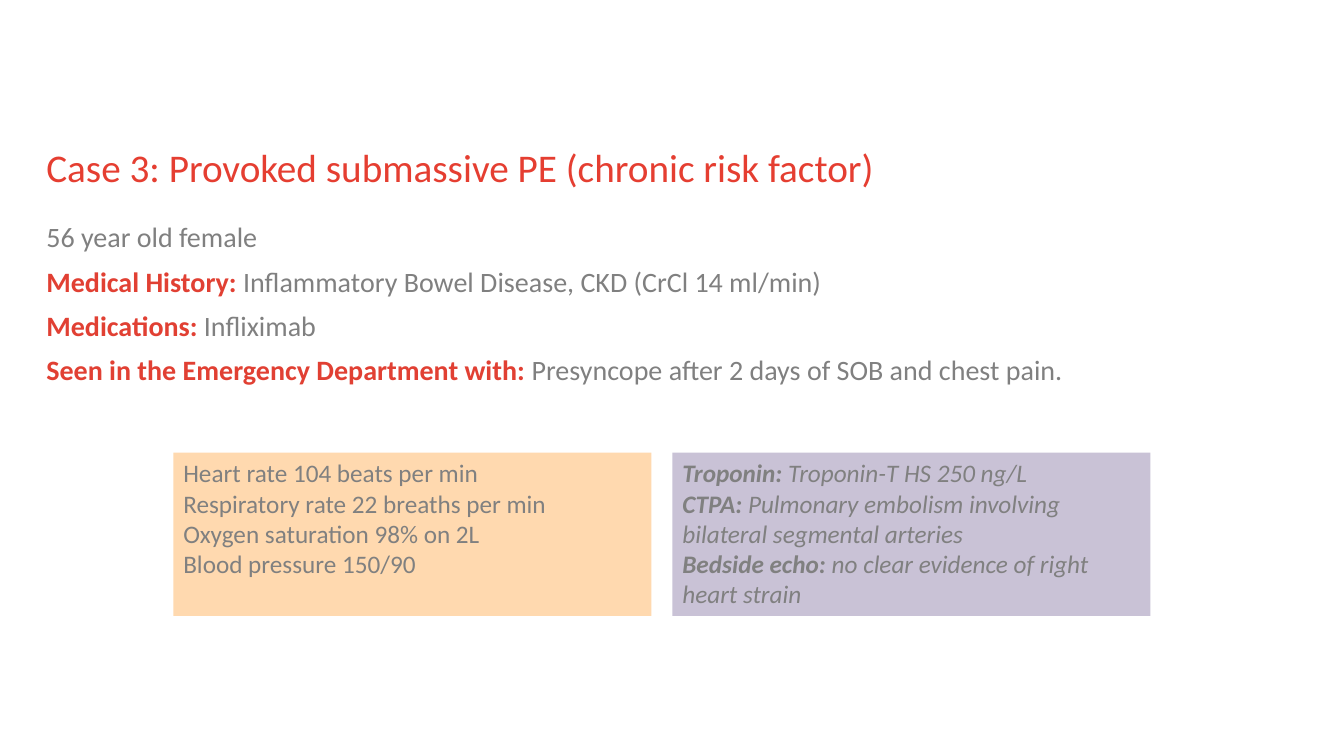
from pptx import Presentation
from pptx.dml.color import RGBColor
from pptx.enum.shapes import MSO_SHAPE
from pptx.enum.text import MSO_ANCHOR, PP_ALIGN
from pptx.util import Inches, Pt

RECTANGLE = MSO_SHAPE.RECTANGLE
TOP = MSO_ANCHOR.TOP
LEFT = PP_ALIGN.LEFT

# Content: each line is a (label, detail) pair
CASE_TITLE = [("", "Case 3: Provoked submassive PE (chronic risk factor)")]
HISTORY = [
    ("", "56 year old female"),
    ("Medical History: ", "Inflammatory Bowel Disease, CKD (CrCl 14 ml/min)"),
    ("Medications: ", "Infliximab"),
    ("Seen in the Emergency Department with: ",
     "Presyncope after 2 days of SOB and chest pain."),
]
VITALS = [
    ("", "Heart rate 104 beats per min"),
    ("", "Respiratory rate 22 breaths per min"),
    ("", "Oxygen saturation 98% on 2L"),
    ("", "Blood pressure 150/90"),
]
FINDINGS = [
    ("Troponin: ", "Troponin-T HS 250 ng/L"),
    ("CTPA: ", "Pulmonary embolism involving bilateral segmental arteries"),
    ("Bedside echo: ", "no clear evidence of right heart strain"),
]
PANELS = [(VITALS, "FFD9AF", False), (FINDINGS, "C9C2D6", True)]

# Format
FONT = "Calibri"
TITLE_RED, LABEL_RED, GREY = "E53E31", "E14033", "808080"
MARGINS = ("margin_left", "margin_top", "margin_right", "margin_bottom")
TEXT_LEFT, TEXT_WIDTH = 0.46, 12
PANEL_LEFT, PANEL_TOP = 1.72, 4.49
PANEL_WIDTH, PANEL_HEIGHT, PANEL_GAP = 4.74, 1.62, 0.21


def color(hex_value):
    return RGBColor.from_string(hex_value)


def write(frame, lines, size, detail_color=GREY, label_color=GREY,
          italic=False, line_spacing=1.0, gap=0):
    frame.word_wrap = True
    frame.vertical_anchor = TOP
    for index, (label, detail) in enumerate(lines):
        paragraph = frame.paragraphs[0] if index == 0 else frame.add_paragraph()
        layout = {"alignment": LEFT, "line_spacing": line_spacing,
                  "space_before": Pt(gap if index else 0)}
        for key, value in layout.items():
            setattr(paragraph, key, value)
        for text, bold, hex_value in ((label, True, label_color),
                                      (detail, False, detail_color)):
            if not text:
                continue
            run = paragraph.add_run()
            run.text = text
            style = {"name": FONT, "size": Pt(size), "bold": bold, "italic": italic}
            for key, value in style.items():
                setattr(run.font, key, value)
            run.font.color.rgb = color(hex_value)


def add_text(slide, top, height, lines, size, **style):
    box = slide.shapes.add_textbox(Inches(TEXT_LEFT), Inches(top),
                                   Inches(TEXT_WIDTH), Inches(height))
    for margin in MARGINS:
        setattr(box.text_frame, margin, 0)
    write(box.text_frame, lines, size, line_spacing=0.9, **style)


def main():
    deck = Presentation()
    deck.slide_width, deck.slide_height = Inches(13.33), Inches(7.5)
    slide = deck.slides.add_slide(deck.slide_layouts[6])

    # Title and patient history
    add_text(slide, 1.47, 0.46, CASE_TITLE, 28, detail_color=TITLE_RED)
    add_text(slide, 2.22, 4.32, HISTORY, 20, label_color=LABEL_RED, gap=10)

    # Vitals and findings side by side
    for column, (lines, fill, italic) in enumerate(PANELS):
        left = PANEL_LEFT + column * (PANEL_WIDTH + PANEL_GAP)
        panel = slide.shapes.add_shape(
            RECTANGLE, Inches(left), Inches(PANEL_TOP),
            Inches(PANEL_WIDTH), Inches(PANEL_HEIGHT))
        panel.shadow.inherit = False
        panel.fill.solid()
        panel.fill.fore_color.rgb = color(fill)
        panel.line.fill.background()
        write(panel.text_frame, lines, 18, italic=italic)

    deck.save("out.pptx")


if __name__ == "__main__":
    main()
